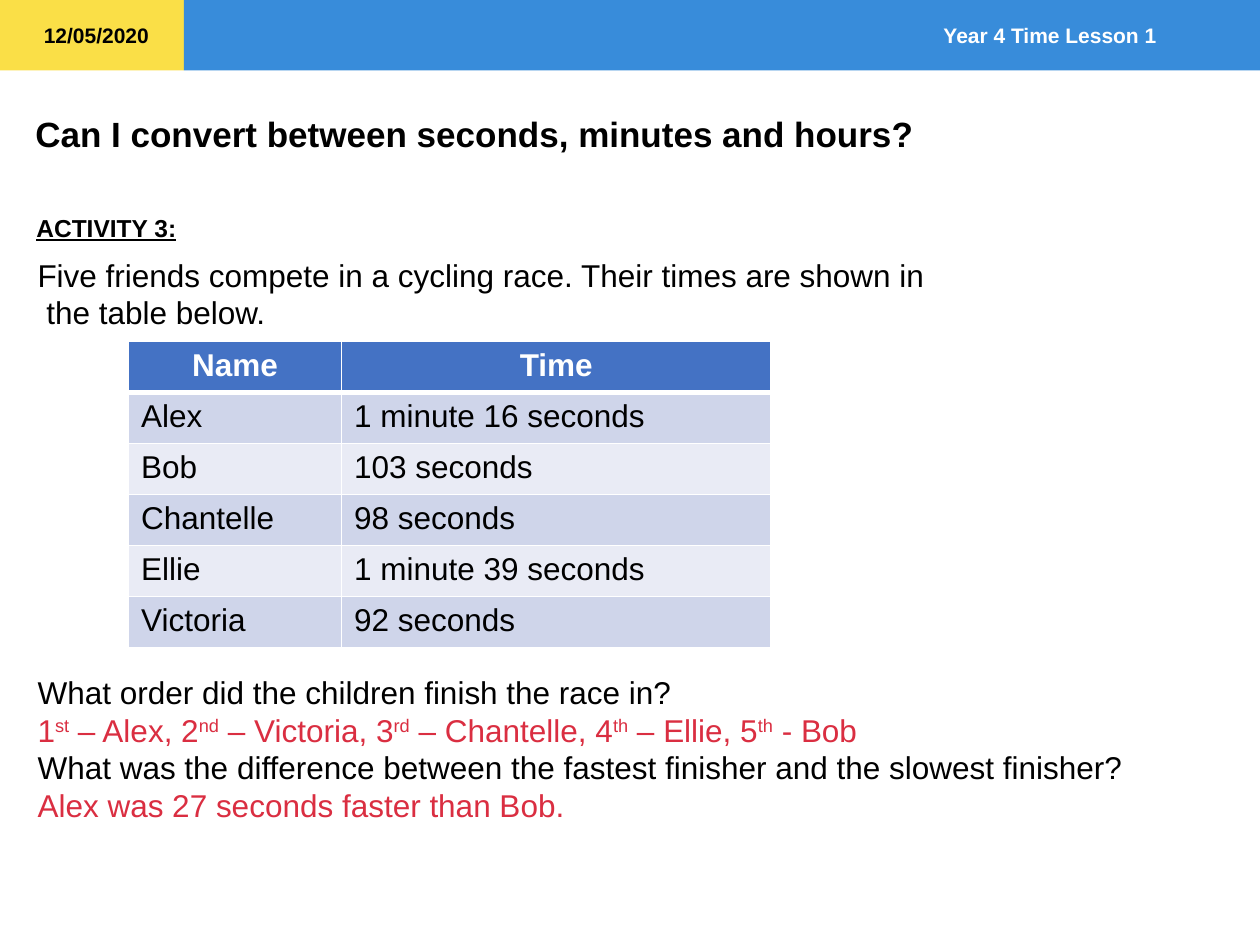
from pptx import Presentation
from pptx.dml.color import RGBColor
from pptx.enum.shapes import MSO_SHAPE
from pptx.enum.text import MSO_ANCHOR, MSO_AUTO_SIZE, PP_ALIGN
from pptx.oxml.ns import qn
from pptx.util import Inches, Pt
from lxml.etree import SubElement

WIDTH, HEIGHT = 10, 7.5
BAND, SPLIT = 0.56, 1.46
COLORS = {
    "yellow": "FADF47", "blue": "388CDA", "head": "4472C4",
    "odd": "CFD5EA", "even": "E9EBF5",
    "white": "FFFFFF", "black": "000000", "answer": "DA2E41",
}
TIMES = [
    ("Name", "Time"),
    ("Alex", "1 minute 16 seconds"),
    ("Bob", "103 seconds"),
    ("Chantelle", "98 seconds"),
    ("Ellie", "1 minute 39 seconds"),
    ("Victoria", "92 seconds"),
]
COLS, ROW = (1.69, 3.41), 0.405
PLACES = [("1", "st", "Alex"), ("2", "nd", "Victoria"), ("3", "rd", "Chantelle"),
          ("4", "th", "Ellie")]


def rgb(name):
    return RGBColor.from_string(COLORS[name])


def add_run(para, text, size=18, color="black", bold=False, line=False, high=False):
    run = para.add_run()
    run.text = text
    font = run.font
    font.name, font.size = "Arial", Pt(size)
    font.bold, font.underline = bold, line
    font.color.rgb = rgb(color)
    if high:
        run._r.get_or_add_rPr().set("baseline", "30000")


def add_bar(slide, left, width, color):
    bar = slide.shapes.add_shape(MSO_SHAPE.RECTANGLE, Inches(left), 0,
                                 Inches(width), Inches(BAND))
    bar.shadow.inherit = False
    bar.fill.solid()
    bar.fill.fore_color.rgb = rgb(color)
    bar.line.fill.background()
    return bar


def add_text(slide, box, paras, wrap=True):
    """Each paragraph is a list of (text, style) runs."""
    frame = slide.shapes.add_textbox(*map(Inches, box)).text_frame
    frame.word_wrap = wrap
    for i, runs in enumerate(paras):
        para = frame.add_paragraph() if i else frame.paragraphs[0]
        for text, style in runs:
            add_run(para, text, **style)


def set_title(slide, text):
    title = slide.shapes.title
    title.left, title.top = Inches(0.18), Inches(0.84)
    title.width, title.height = Inches(9.35), Inches(0.44)
    frame = title.text_frame
    frame.auto_size = MSO_AUTO_SIZE.NONE
    frame.vertical_anchor = MSO_ANCHOR.TOP
    para = frame.paragraphs[0]
    para.alignment = PP_ALIGN.LEFT
    add_run(para, text, 20, bold=True)


def set_edges(cell, row):
    thick = {"lnT": row == 1, "lnB": row == 0}
    props = cell._tc.get_or_add_tcPr()
    for side in ("lnL", "lnR", "lnT", "lnB"):
        edge = SubElement(props, qn("a:" + side), w=str(Pt(3 if thick.get(side) else 1)))
        fill = SubElement(edge, qn("a:solidFill"))
        SubElement(fill, qn("a:srgbClr"), val=COLORS["white"])


def add_times(slide):
    table = slide.shapes.add_table(
        len(TIMES), len(COLS), Inches(1.02), Inches(2.71),
        Inches(sum(COLS)), Inches(ROW * len(TIMES))).table
    for col, width in zip(table.columns, COLS):
        col.width = Inches(width)
    for r, names in enumerate(TIMES):
        head = r == 0
        for c, text in enumerate(names):
            cell = table.cell(r, c)
            set_edges(cell, r)
            cell.fill.solid()
            cell.fill.fore_color.rgb = rgb("head" if head else "odd" if r % 2 else "even")
            para = cell.text_frame.paragraphs[0]
            para.alignment = PP_ALIGN.CENTER if head else PP_ALIGN.LEFT
            add_run(para, text, color="white" if head else "black", bold=head)


def order_runs():
    red = {"color": "answer"}
    raised = {"color": "answer", "high": True}
    runs = []
    for rank, end, name in PLACES:
        runs += [(rank, red), (end, raised), (f" – {name}, ", red)]
    return runs + [("5", red), ("th", raised), (" - Bob", red)]


def main():
    deck = Presentation()
    deck.slide_width, deck.slide_height = Inches(WIDTH), Inches(HEIGHT)
    slide = deck.slides.add_slide(deck.slide_layouts[5])

    add_bar(slide, 0, SPLIT, "yellow")
    frame = add_bar(slide, SPLIT, WIDTH - SPLIT, "blue").text_frame
    frame.margin_right = Inches(0.82)
    frame.vertical_anchor = MSO_ANCHOR.MIDDLE
    para = frame.paragraphs[0]
    para.alignment = PP_ALIGN.RIGHT
    add_run(para, "Year 4 Time Lesson 1", 12, "white", bold=True)

    set_title(slide, "Can I convert between seconds, minutes and hours?")
    add_text(slide, (0.25, 0.13, 1.04, 0.3),
             [[("12/05/2020", {"size": 12, "bold": True})]], wrap=False)
    add_text(slide, (0.19, 1.64, 1.32, 0.34),
             [[("ACTIVITY 3:", {"size": 14, "bold": True, "line": True})]], wrap=False)
    add_text(slide, (0.2, 1.98, 9.8, 0.7), [
        [("Five friends compete in a cycling race. Their times are shown in", {})],
        [(" the table below.", {})],
    ])
    add_times(slide)
    add_text(slide, (0.2, 5.29, 9.8, 1.31), [
        [("What order did the children finish the race in?", {})],
        order_runs(),
        [("What was the difference between the fastest finisher and the slowest finisher?", {})],
        [("Alex was 27 seconds faster than Bob.", {"color": "answer"})],
    ])
    deck.save("out.pptx")


if __name__ == "__main__":
    main()
